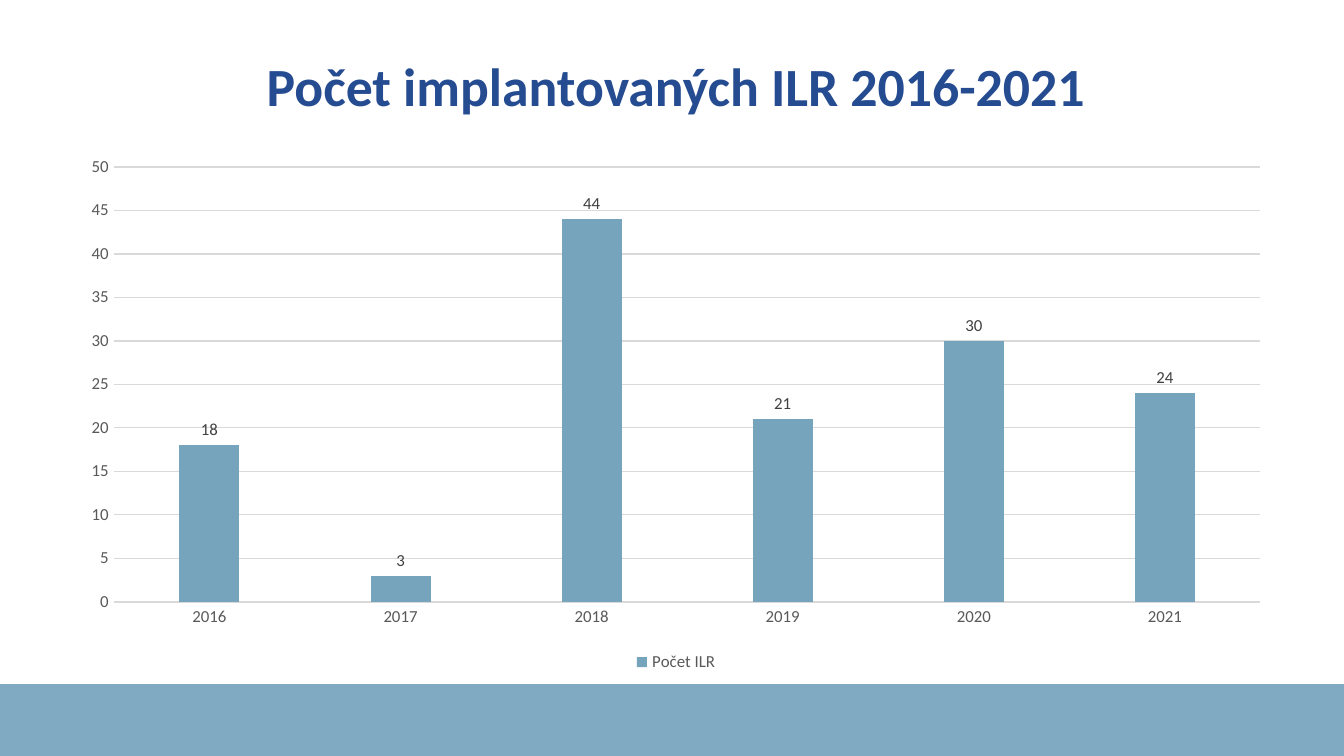
from typing import NamedTuple

from lxml import etree
from pptx import Presentation
from pptx.chart.data import CategoryChartData
from pptx.dml.color import RGBColor
from pptx.enum.chart import XL_CHART_TYPE, XL_LABEL_POSITION, XL_LEGEND_POSITION, XL_TICK_MARK
from pptx.enum.shapes import MSO_SHAPE
from pptx.enum.text import MSO_ANCHOR, MSO_AUTO_SIZE, PP_ALIGN
from pptx.oxml.ns import qn
from pptx.util import Inches, Pt

COLUMNS = XL_CHART_TYPE.COLUMN_CLUSTERED
OUTSIDE_END = XL_LABEL_POSITION.OUTSIDE_END
BOTTOM = XL_LEGEND_POSITION.BOTTOM
NO_TICK = XL_TICK_MARK.NONE
RECTANGLE = MSO_SHAPE.RECTANGLE
MIDDLE = MSO_ANCHOR.MIDDLE
NO_AUTOFIT = MSO_AUTO_SIZE.NONE
CENTER = PP_ALIGN.CENTER

FONT = "Calibri"
STEEL_BLUE = "76A4BD"
NAVY = "254B90"
GRID_GREY = "D9D9D9"
AXIS_GREY = "595959"
LABEL_GREY = "404040"
WHITE = "FFFFFF"

SLIDE_WIDTH = 10
SLIDE_HEIGHT = SLIDE_WIDTH * 9 / 16
LAYER_COUNT = 2
LAYER_OPACITY = 73  # percent


class Box(NamedTuple):
    left: float
    top: float
    width: float
    height: float

    def lengths(self):
        return [Inches(value) for value in self]


class YearCount(NamedTuple):
    year: str
    implants: int


FOOTER_TOP = 5.09
FOOTER_BOX = Box(0, FOOTER_TOP, SLIDE_WIDTH, SLIDE_HEIGHT - FOOTER_TOP)
TITLE_BOX = Box(0.5, 0.41, 9.06, 0.5)
CHART_BOX = Box(0.5, 1.09, 9.06, 3.95)
COUNTS = [
    YearCount("2016", 18),
    YearCount("2017", 3),
    YearCount("2018", 44),
    YearCount("2019", 21),
    YearCount("2020", 30),
    YearCount("2021", 24),
]


def color(value: str) -> RGBColor:
    return RGBColor.from_string(value)


def style_font(font, size: float, value: str, bold: bool = False) -> None:
    font.name = FONT
    font.size = Pt(size)
    font.bold = bold
    font.color.rgb = color(value)


def style_line(line, value: str) -> None:
    line.color.rgb = color(value)
    line.width = Pt(0.75)


def add_footer_layer(slide) -> None:
    """Add one translucent layer of the footer band."""
    shape = slide.shapes.add_shape(RECTANGLE, *FOOTER_BOX.lengths())
    shape.shadow.inherit = False
    shape.fill.solid()
    shape.fill.fore_color.rgb = color(STEEL_BLUE)
    shape.line.fill.background()
    fill_color = shape.element.find(".//" + qn("a:srgbClr"))
    etree.SubElement(fill_color, qn("a:alpha"), val=str(LAYER_OPACITY * 1000))


def format_title(slide, text: str) -> None:
    title = slide.shapes.title
    title.left, title.top, title.width, title.height = TITLE_BOX.lengths()
    frame = title.text_frame
    frame.word_wrap = True
    frame.auto_size = NO_AUTOFIT
    frame.vertical_anchor = MIDDLE
    frame.margin_left = frame.margin_right = Inches(0.06)
    frame.margin_top = frame.margin_bottom = Inches(0.03)
    paragraph = frame.paragraphs[0]
    paragraph.alignment = CENTER
    paragraph.line_spacing = 0.9
    run = paragraph.add_run()
    run.text = text
    style_font(run.font, 28.8, NAVY, bold=True)


def style_axis(axis) -> None:
    axis.major_tick_mark = NO_TICK
    axis.minor_tick_mark = NO_TICK
    style_font(axis.tick_labels.font, 9, AXIS_GREY)


def add_implant_chart(slide, counts: list[YearCount]) -> None:
    data = CategoryChartData()
    data.categories = [count.year for count in counts]
    data.add_series("Počet ILR", [count.implants for count in counts])
    chart = slide.shapes.add_chart(COLUMNS, *CHART_BOX.lengths(), data).chart
    style_font(chart.font, 10, "000000")
    chart.has_title = False
    chart.has_legend = True
    chart.legend.position = BOTTOM
    chart.legend.include_in_layout = False
    style_font(chart.legend.font, 9, AXIS_GREY)

    style_axis(chart.category_axis)
    style_line(chart.category_axis.format.line, GRID_GREY)

    value_axis = chart.value_axis
    style_axis(value_axis)
    value_axis.minimum_scale = 0
    value_axis.maximum_scale = 50
    value_axis.major_unit = 5
    value_axis.format.line.fill.background()
    value_axis.has_major_gridlines = True
    style_line(value_axis.major_gridlines.format.line, GRID_GREY)

    plot = chart.plots[0]
    plot.vary_by_categories = False
    plot.gap_width = 219
    plot.overlap = -27
    series = plot.series[0]
    series.format.fill.solid()
    series.format.fill.fore_color.rgb = color(STEEL_BLUE)
    labels = series.data_labels
    labels.show_value = True
    labels.position = OUTSIDE_END
    style_font(labels.font, 9, LABEL_GREY)


def main() -> None:
    presentation = Presentation()
    presentation.slide_width = Inches(SLIDE_WIDTH)
    presentation.slide_height = Inches(SLIDE_HEIGHT)
    title_only = presentation.slide_layouts[5]
    slide = presentation.slides.add_slide(title_only)
    slide.background.fill.solid()
    slide.background.fill.fore_color.rgb = color(WHITE)
    for _ in range(LAYER_COUNT):
        add_footer_layer(slide)
    format_title(slide, "Počet implantovaných ILR 2016-2021")
    add_implant_chart(slide, COUNTS)
    presentation.save("out.pptx")


if __name__ == "__main__":
    main()
